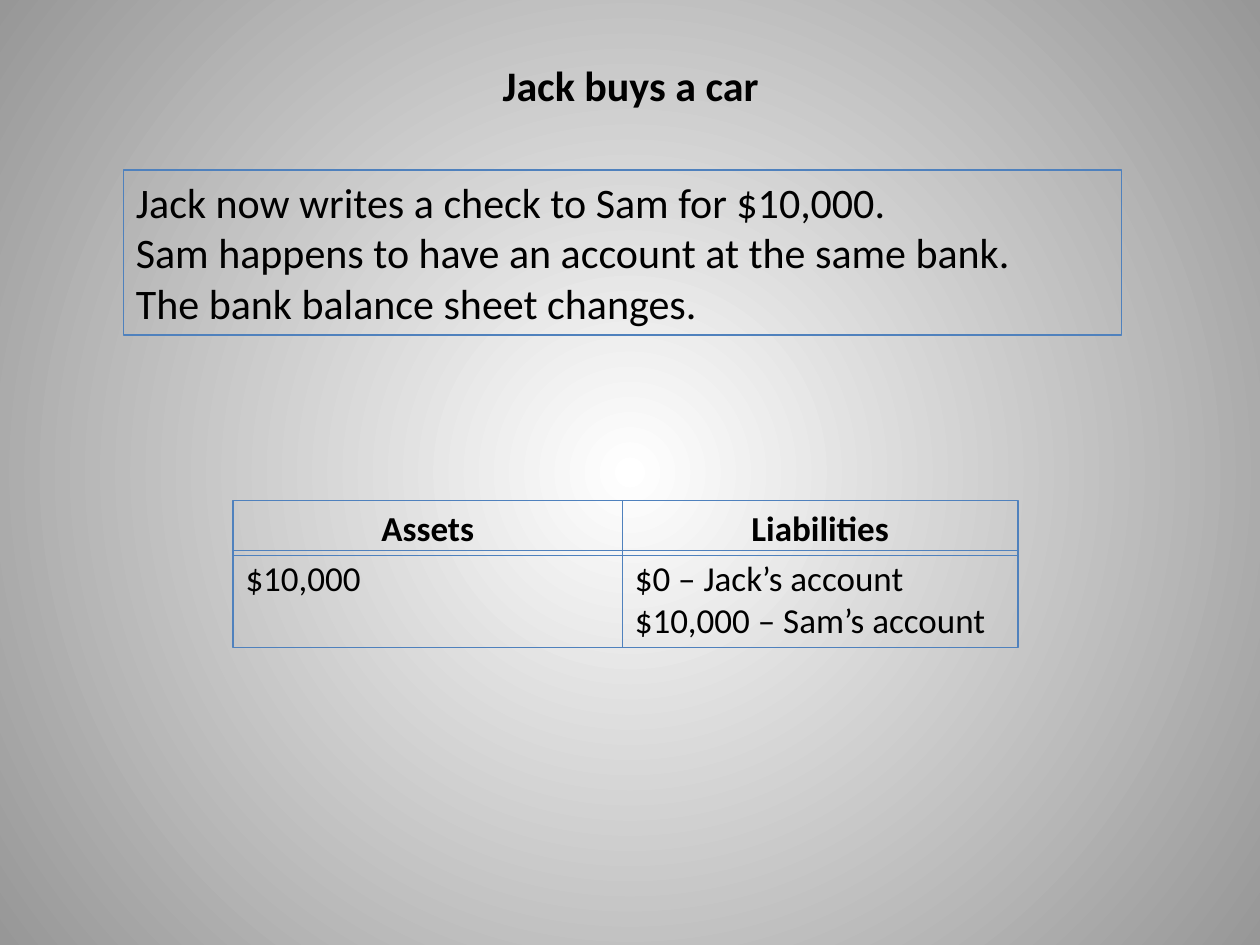
from dataclasses import dataclass

from lxml.etree import SubElement
from pptx import Presentation
from pptx.dml.color import RGBColor
from pptx.enum.shapes import MSO_SHAPE
from pptx.enum.text import MSO_ANCHOR, PP_ALIGN
from pptx.oxml.ns import qn
from pptx.util import Inches, Pt


@dataclass(frozen=True)
class Theme:
    font: str = "Calibri"
    text: RGBColor = RGBColor(0x00, 0x00, 0x00)
    border: RGBColor = RGBColor(0x4F, 0x81, 0xBD)
    center: RGBColor = RGBColor(0xFF, 0xFF, 0xFF)
    edge: RGBColor = RGBColor(0x97, 0x97, 0x97)
    large: Pt = Pt(24)
    small: Pt = Pt(20)
    line: Pt = Pt(0.75)


THEME = Theme()


def set_radial_background(s):
    fill = s.background.fill
    fill.gradient()
    for stop, color, position in zip(fill.gradient_stops, (THEME.center, THEME.edge), (0, 1)):
        stop.color.rgb = color
        stop.position = position
    grad = s.background._cSld.find(".//" + qn("a:gradFill"))
    grad.remove(grad.find(qn("a:lin")))
    radial = SubElement(grad, qn("a:path"), {"path": "circle"})
    SubElement(radial, qn("a:fillToRect"), {side: "50000" for side in "ltrb"})


def write_lines(sp, lines, size, heading=False):
    tf = sp.text_frame
    tf.word_wrap = True
    tf.vertical_anchor = MSO_ANCHOR.TOP
    tf.text = "\n".join(lines)
    for p in tf.paragraphs:
        p.alignment = PP_ALIGN.CENTER if heading else PP_ALIGN.LEFT
        p.font.name = THEME.font
        p.font.size = size
        p.font.bold = heading
        p.font.color.rgb = THEME.text


def add_title(s, text, left, top, width, height):
    sp = s.shapes.add_textbox(Inches(left), Inches(top), Inches(width), Inches(height))
    write_lines(sp, [text], THEME.large, heading=True)


def add_box(s, lines, left, top, width, height, size, heading=False):
    sp = s.shapes.add_shape(MSO_SHAPE.RECTANGLE, Inches(left), Inches(top),
                            Inches(width), Inches(height))
    sp.shadow.inherit = False
    sp.fill.background()
    sp.line.color.rgb = THEME.border
    sp.line.width = THEME.line
    write_lines(sp, lines, size, heading)


def add_balance_sheet(s, columns, left, top):
    """Draw each column as a heading box with an entries box slightly overlapping it."""
    for heading, entries, width in columns:
        add_box(s, [heading], left, top, width, 0.44, THEME.small, heading=True)
        add_box(s, entries, left, top + 0.4, width, 0.77, THEME.small)
        left += width


def main():
    prs = Presentation()
    prs.slide_width, prs.slide_height = Inches(10), Inches(7.5)
    s = prs.slides.add_slide(prs.slide_layouts[6])
    set_radial_background(s)
    add_title(s, "Jack buys a car", 1.42, 0.42, 7.17, 0.5)
    add_box(s, ["Jack now writes a check to Sam for $10,000.",
                "Sam happens to have an account at the same bank.",
                "The bank balance sheet changes."],
            0.98, 1.35, 7.92, 1.31, THEME.large)
    add_balance_sheet(s, [
        ("Assets", ["$10,000"], 3.09),
        ("Liabilities", ["$0 – Jack’s account", "$10,000 – Sam’s account"], 3.14),
    ], left=1.85, top=3.97)
    prs.save("out.pptx")


if __name__ == "__main__":
    main()
